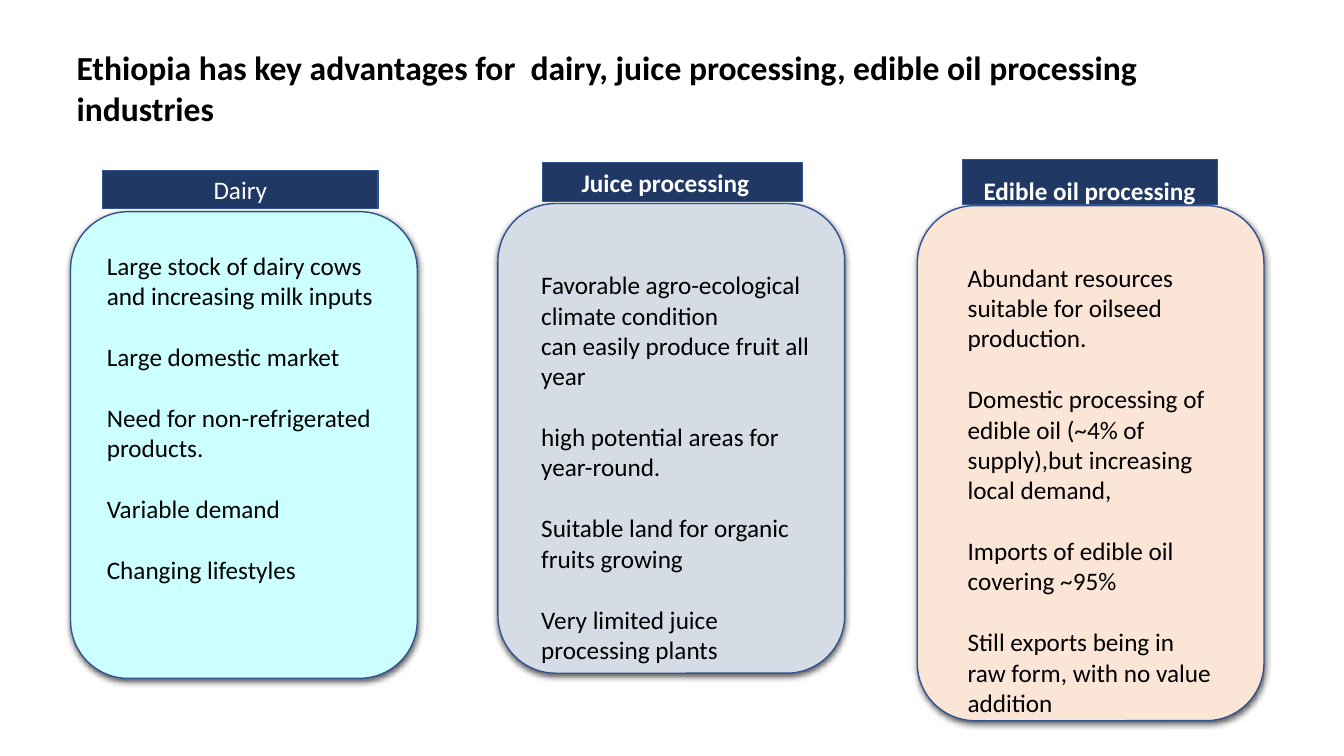
from lxml import etree
from pptx import Presentation
from pptx.dml.color import RGBColor
from pptx.enum.shapes import MSO_SHAPE
from pptx.enum.text import MSO_ANCHOR, MSO_AUTO_SIZE, PP_ALIGN
from pptx.oxml.ns import qn
from pptx.util import Pt

RECT, ROUND_RECT = MSO_SHAPE.RECTANGLE, MSO_SHAPE.ROUNDED_RECTANGLE
TOP = MSO_ANCHOR.TOP
NO_AUTOFIT = MSO_AUTO_SIZE.NONE
LEFT, CENTER = PP_ALIGN.LEFT, PP_ALIGN.CENTER

COLORS = {
    "text": "000000", "header": "203864", "header_text": "FFFFFF", "outline": "325491",
    "dairy": "CCFFFF", "juice": "D6DCE5", "oil": "FBE5D6", "shadow": "000000",
}
FONT = "Calibri"
COMPARISON_LAYOUT = 4
CARD_WIDTH = 247.7
LINE_GAP = 22

TITLE = ("Ethiopia has key advantages for  dairy, juice processing, "
         "edible oil processing industries")
TITLE_BOX = (47.5, 30.2, 836, 65.5)

# Boxes are left, top, width, height; a card is left, top, height.
# Each point is its text and whether a gap stands above it.
INDUSTRIES = [
    {
        "header": "Dairy", "bold": False, "align": CENTER, "inset": (0, 2.7),
        "header_box": (73.4, 121.7, 196.6, 27.4), "header_behind": True,
        "card": (50.4, 151.2, 333.4), "color": "dairy",
        "list_box": (69.1, 175, 215.3, 247),
        "points": [
            ("Large stock of dairy cows and increasing milk inputs", False),
            ("Large domestic market", True),
            ("Need for non-refrigerated products.", True),
            ("Variable demand", True),
            ("Changing lifestyles", True),
        ],
    },
    {
        "header": "Juice processing", "bold": True, "align": LEFT, "inset": (28, 3.6),
        "header_box": (387.4, 115.9, 185.8, 28.1), "header_behind": False,
        "card": (355.7, 145.4, 335.5), "color": "juice",
        "list_box": (379.4, 189, 215.3, 312),
        "points": [
            ("Favorable agro-ecological climate condition", False),
            ("can easily produce fruit all year", False),
            ("high potential areas for year-round.", True),
            ("Suitable land for organic fruits growing", True),
            ("Very limited juice processing plants", True),
        ],
    },
    {
        "header": "Edible oil processing", "bold": True, "align": LEFT, "inset": (15, 11.5),
        "header_box": (687.6, 113.8, 182.2, 32.4), "header_behind": False,
        "card": (655.2, 146.9, 367.9), "color": "oil",
        "list_box": (684, 183.6, 193, 334),
        "points": [
            ("Abundant resources suitable for oilseed production.", False),
            ("Domestic processing of edible oil (~4% of supply),"
             "but increasing local demand,", True),
            ("Imports of edible oil covering ~95%", True),
            ("Still exports being in raw form, with no value addition", True),
        ],
    },
]


def rgb(name):
    return RGBColor.from_string(COLORS[name])


def place(shape, box):
    shape.left, shape.top, shape.width, shape.height = (Pt(v) for v in box)


def set_font(paragraph, size, color, bold):
    font = paragraph.font
    font.name, font.size, font.bold = FONT, Pt(size), bold
    font.color.rgb = rgb(color)


def prepare_frame(frame):
    frame.word_wrap = True
    frame.auto_size = NO_AUTOFIT
    frame.vertical_anchor = TOP


def add_panel(slide, kind, box, color):
    panel = slide.shapes.add_shape(kind, *(Pt(v) for v in box))
    panel.shadow.inherit = False
    panel.fill.solid()
    panel.fill.fore_color.rgb = rgb(color)
    panel.line.color.rgb = rgb("outline")
    panel.line.width = Pt(1)
    return panel


def add_header(slide, industry):
    header = add_panel(slide, RECT, industry["header_box"], "header")
    frame = header.text_frame
    prepare_frame(frame)
    left, top = industry["inset"]
    frame.margin_left, frame.margin_top = Pt(left), Pt(top)
    frame.margin_right = frame.margin_bottom = 0
    paragraph = frame.paragraphs[0]
    paragraph.text = industry["header"]
    paragraph.alignment = industry["align"]
    set_font(paragraph, 18, "header_text", industry["bold"])


def add_card(slide, industry):
    left, top, height = industry["card"]
    card = add_panel(slide, ROUND_RECT, (left, top, CARD_WIDTH, height), industry["color"])
    effects = card.element.spPr.find(qn("a:effectLst"))
    shadow = etree.SubElement(effects, qn("a:outerShdw"), blurRad=str(Pt(4.5)),
                              dist=str(Pt(1.5)), dir="5400000", algn="ctr", rotWithShape="0")
    shade = etree.SubElement(shadow, qn("a:srgbClr"), val=COLORS["shadow"])
    etree.SubElement(shade, qn("a:alpha"), val="63000")


def fill_list(slide, body, industry):
    """Write the points into a body placeholder and bring it in front of its card."""
    place(body, industry["list_box"])
    frame = body.text_frame
    prepare_frame(frame)
    for i, (point, gap) in enumerate(industry["points"]):
        paragraph = frame.add_paragraph() if i else frame.paragraphs[0]
        paragraph.text = point
        paragraph.alignment = LEFT
        paragraph.space_before = Pt(LINE_GAP if gap else 0)
        set_font(paragraph, 18, "text", False)
        properties = paragraph._p.get_or_add_pPr()
        properties.set("marL", "0")
        properties.set("indent", "0")
        bullet = etree.Element(qn("a:buNone"))
        properties.find(qn("a:defRPr")).addprevious(bullet)
    slide.shapes.element.append(body.element)


def main():
    deck = Presentation()
    deck.slide_width, deck.slide_height = Pt(960), Pt(540)
    slide = deck.slides.add_slide(deck.slide_layouts[COMPARISON_LAYOUT])

    title = slide.shapes.title
    place(title, TITLE_BOX)
    prepare_frame(title.text_frame)
    heading = title.text_frame.paragraphs[0]
    heading.text = TITLE
    heading.alignment = LEFT
    set_font(heading, 24, "text", True)

    *bodies, spare = list(slide.placeholders)[1:]
    spare.element.getparent().remove(spare.element)
    for body, industry in zip(bodies, INDUSTRIES):
        parts = [add_card, add_header]
        if industry["header_behind"]:
            parts.reverse()
        for add_part in parts:
            add_part(slide, industry)
        fill_list(slide, body, industry)

    deck.save("out.pptx")


if __name__ == "__main__":
    main()
